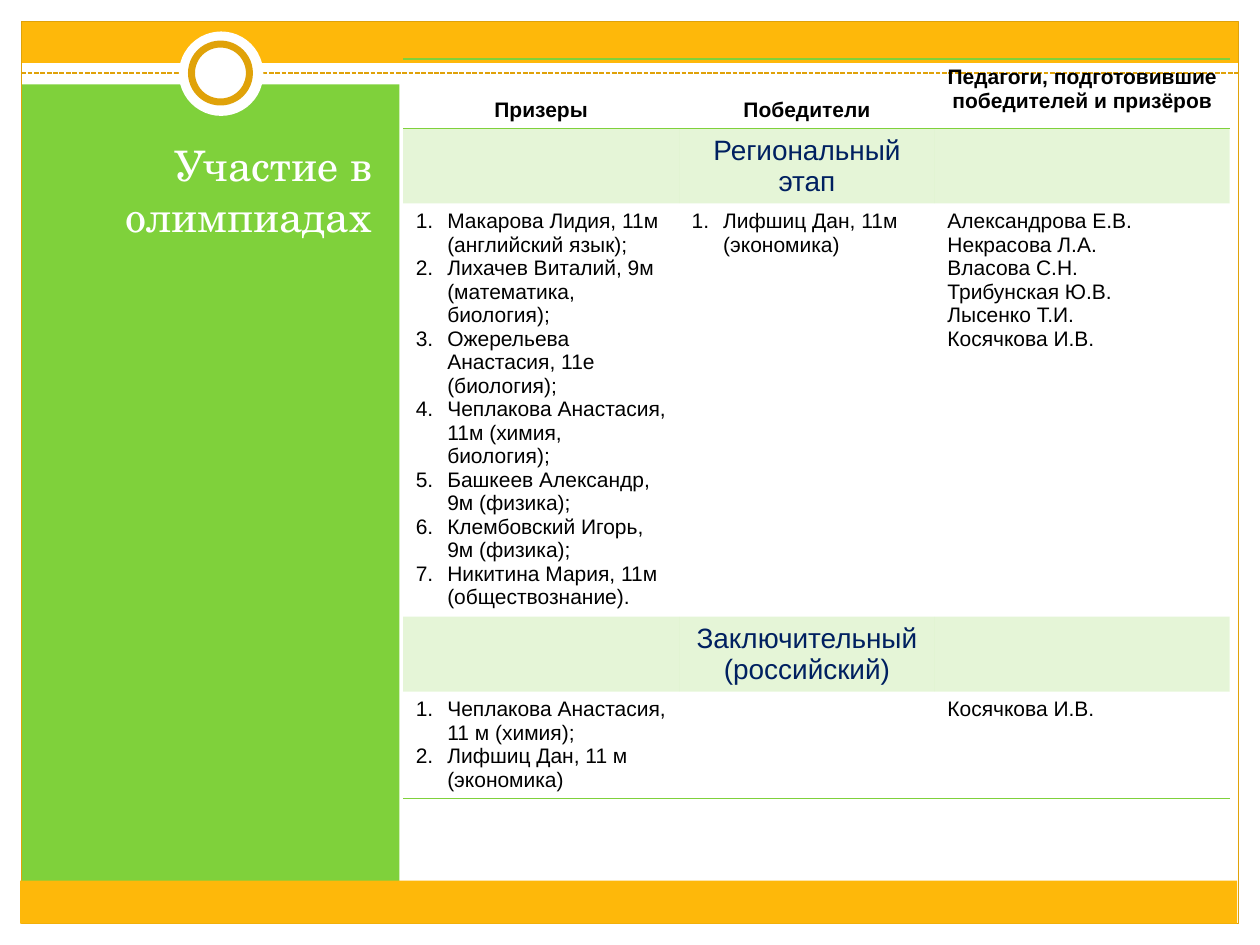
from dataclasses import dataclass

from lxml import etree
from pptx import Presentation
from pptx.dml.color import RGBColor
from pptx.enum.dml import MSO_LINE
from pptx.enum.shapes import MSO_CONNECTOR, MSO_SHAPE
from pptx.enum.text import MSO_ANCHOR, MSO_AUTO_SIZE, PP_ALIGN
from pptx.oxml.ns import qn
from pptx.util import Inches, Pt

RECT, OVAL = MSO_SHAPE.RECTANGLE, MSO_SHAPE.OVAL
LEFT, CENTER, RIGHT = PP_ALIGN.LEFT, PP_ALIGN.CENTER, PP_ALIGN.RIGHT
TOP, BOTTOM = MSO_ANCHOR.TOP, MSO_ANCHOR.BOTTOM
TITLE_ONLY = 5
NO_STYLE_NO_GRID = "{2D5ABB26-0587-4C30-8999-92F81FD0307C}"


@dataclass(frozen=True)
class Theme:
    orange: str = "FEB80A"
    gold: str = "E0A209"
    green: str = "7FD13B"
    white: str = "FFFFFF"
    black: str = "000000"
    navy: str = "002060"
    body_font: str = "Arial"
    title_font: str = "TeX Gyre Schola"
    title_size: int = 24
    stage_size: int = 16
    body_size: int = 12
    band_alpha: int = 20


THEME = Theme()

HEADERS = ["Призеры", "Победители", "Педагоги, подготовившие победителей и призёров"]
REGIONAL = [
    ["Макарова Лидия, 11м (английский язык);",
     "Лихачев Виталий, 9м (математика, биология);",
     "Ожерельева Анастасия, 11е (биология);",
     "Чеплакова Анастасия, 11м (химия, биология);",
     "Башкеев Александр, 9м (физика);",
     "Клембовский Игорь, 9м (физика);",
     "Никитина Мария, 11м (обществознание)."],
    ["Лифшиц Дан, 11м (экономика)"],
    ["Александрова Е.В.", "Некрасова Л.А.", "Власова С.Н.",
     "Трибунская Ю.В.", "Лысенко Т.И.", "Косячкова И.В."],
]
FINAL = [
    ["Чеплакова Анастасия, 11 м (химия);", "Лифшиц Дан, 11 м (экономика)"],
    [],
    ["Косячкова И.В."],
]
COL_WIDTHS = [2.19, 2.03, 2.34]
ROW_HEIGHTS = [0.55, 0.59, 3.28, 0.59, 0.85]


def rgb(color):
    return RGBColor.from_string(color)


def add_shape(slide, kind, x, y, w, h, fill=None, line=None, width=0.75):
    sp = slide.shapes.add_shape(kind, Inches(x), Inches(y), Inches(w), Inches(h))
    sp.shadow.inherit = False
    if fill:
        sp.fill.solid()
        sp.fill.fore_color.rgb = rgb(fill)
    else:
        sp.fill.background()
    if line:
        sp.line.color.rgb = rgb(line)
        sp.line.width = Pt(width)
    else:
        sp.line.fill.background()


def add_dashed_line(slide, x1, x2, y):
    line = slide.shapes.add_connector(
        MSO_CONNECTOR.STRAIGHT, Inches(x1), Inches(y), Inches(x2), Inches(y))
    line.line.color.rgb = rgb(THEME.gold)
    line.line.width = Pt(0.9)
    line.line.dash_style = MSO_LINE.SQUARE_DOT
    etree.SubElement(line._element.spPr, qn("a:effectLst"))


def number_paragraph(p):
    pPr = p._p.get_or_add_pPr()
    pPr.set("marL", str(Inches(0.25)))
    pPr.set("indent", str(-Inches(0.25)))
    etree.SubElement(pPr, qn("a:buFont"), typeface="+mj-lt")
    etree.SubElement(pPr, qn("a:buAutoNum"), type="arabicPeriod")


def write(tf, lines, size=THEME.body_size, color=THEME.black, font=THEME.body_font,
          bold=False, align=LEFT, numbered=False):
    for i, text in enumerate(lines):
        p = tf.add_paragraph() if i else tf.paragraphs[0]
        p.alignment = align
        if numbered:
            number_paragraph(p)
        r = p.add_run()
        r.text = text
        r.font.size = Pt(size)
        r.font.name = font
        r.font.bold = bold
        r.font.color.rgb = rgb(color)


def set_border(cell, *sides):
    """Draw a green 1 pt line on the sides, given in schema order: lnT, lnB."""
    tcPr = cell._tc.get_or_add_tcPr()
    for i, side in enumerate(sides):
        ln = etree.Element(qn(f"a:{side}"), w=str(Pt(1)))
        fill = etree.SubElement(ln, qn("a:solidFill"))
        etree.SubElement(fill, qn("a:srgbClr"), val=THEME.green)
        tcPr.insert(i, ln)


def tint(cell):
    """Fill the cell with translucent green."""
    cell.fill.solid()
    cell.fill.fore_color.rgb = rgb(THEME.green)
    clr = cell._tc.tcPr.find(f".//{qn('a:srgbClr')}")
    etree.SubElement(clr, qn("a:alpha"), val=str(THEME.band_alpha * 1000))


def fill_header(table):
    for col, text in enumerate(HEADERS):
        cell = table.cell(0, col)
        cell.vertical_anchor = TOP if col == 2 else BOTTOM
        write(cell.text_frame, [text], bold=True, align=CENTER)
        set_border(cell, "lnT", "lnB")


def fill_stage(table, row, name, results):
    """Write a tinted stage row and the row of results below it."""
    for col, lines in enumerate(results):
        tint(table.cell(row, col))
        write(table.cell(row + 1, col).text_frame, lines, numbered=col < 2)
    write(table.cell(row, 1).text_frame, [name], size=THEME.stage_size,
          color=THEME.navy, align=CENTER)


def add_results_table(slide):
    table = slide.shapes.add_table(
        len(ROW_HEIGHTS), len(COL_WIDTHS), Inches(3.2), Inches(0.47),
        Inches(sum(COL_WIDTHS)), Inches(sum(ROW_HEIGHTS))).table
    table.first_row = table.horz_banding = False
    table._tbl.tblPr.find(qn("a:tableStyleId")).text = NO_STYLE_NO_GRID
    for column, width in zip(table.columns, COL_WIDTHS):
        column.width = Inches(width)
    for row, height in zip(table.rows, ROW_HEIGHTS):
        row.height = Inches(height)
    for cell in table.iter_cells():
        cell.fill.background()
    fill_header(table)
    fill_stage(table, 1, "Региональный этап", REGIONAL)
    fill_stage(table, 3, "Заключительный (российский)", FINAL)
    for col in range(len(COL_WIDTHS)):
        set_border(table.cell(4, col), "lnB")


def add_decoration(slide):
    add_shape(slide, RECT, 0.17, 0.17, 9.66, 0.33, fill=THEME.orange)
    add_shape(slide, RECT, 0.17, 0.67, 3, 6.42, fill=THEME.green)
    add_shape(slide, RECT, 0.17, 0.17, 9.66, 7.16, line=THEME.gold)
    add_dashed_line(slide, 0.17, 9.83, 0.58)
    add_shape(slide, OVAL, 1.42, 0.25, 0.67, 0.67, fill=THEME.white)
    add_shape(slide, OVAL, 1.52, 0.35, 0.46, 0.46, fill=THEME.white,
              line=THEME.gold, width=4)
    add_shape(slide, RECT, 0.16, 6.99, 9.66, 0.34, fill=THEME.orange)


def place_title(slide, text):
    title = slide.shapes.title
    title.left, title.top = Inches(0.39), Inches(1.02)
    title.width, title.height = Inches(2.66), Inches(0.94)
    tf = title.text_frame
    tf.word_wrap = True
    tf.auto_size = MSO_AUTO_SIZE.NONE
    tf.vertical_anchor = BOTTOM
    write(tf, [text], size=THEME.title_size, color=THEME.white,
          font=THEME.title_font, align=RIGHT)
    # Bring the title in front of the green panel
    slide.shapes._spTree.append(title._element)


def main():
    prs = Presentation()
    prs.slide_width, prs.slide_height = Inches(10), Inches(7.5)
    slide = prs.slides.add_slide(prs.slide_layouts[TITLE_ONLY])
    add_decoration(slide)
    place_title(slide, "Участие в олимпиадах")
    add_results_table(slide)
    prs.save("out.pptx")


if __name__ == "__main__":
    main()
